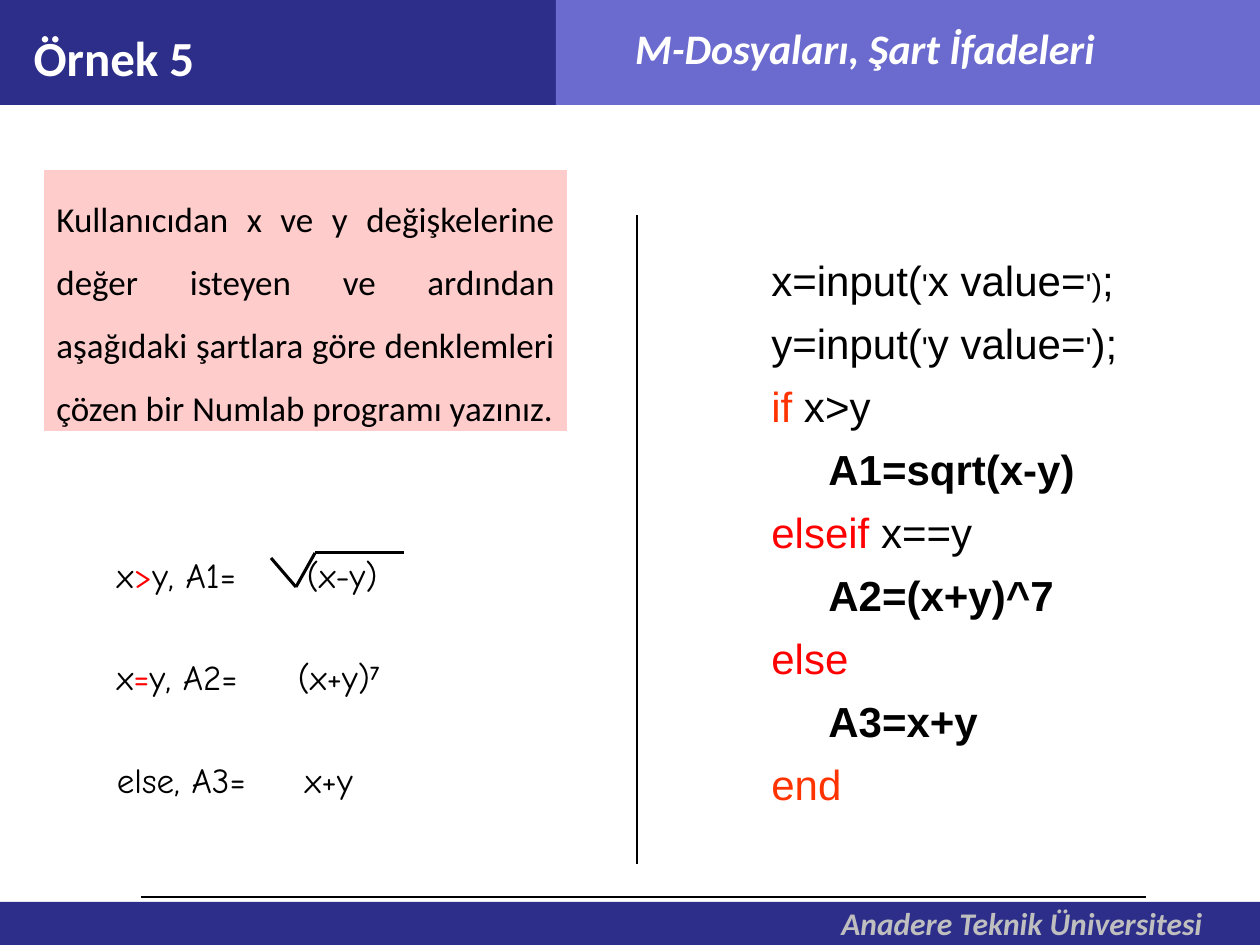
"""Build the slide on conditional statements in M-files."""
from lxml.etree import SubElement
from pptx import Presentation
from pptx.dml.color import RGBColor
from pptx.enum.shapes import MSO_CONNECTOR, MSO_SHAPE
from pptx.enum.text import MSO_ANCHOR, MSO_AUTO_SIZE, PP_ALIGN
from pptx.oxml.ns import qn
from pptx.util import Emu, Pt

PX_PER_INCH = 126
BLACK = RGBColor(0x00, 0x00, 0x00)
WHITE = RGBColor(0xFF, 0xFF, 0xFF)
SILVER = RGBColor(0xBF, 0xBF, 0xBF)
NAVY = RGBColor(0x2D, 0x2D, 0x8A)
VIOLET = RGBColor(0x6B, 0x6B, 0xCF)
PINK = RGBColor(0xFF, 0xCC, 0xCC)
RED = RGBColor(0xFF, 0x00, 0x00)
ORANGE = RGBColor(0xFF, 0x33, 0x00)

SMALL = {"size": 18}
BOLD = {"bold": True}
QUOTE = ("'", SMALL)
EQUATIONS = [
    (["x", (">", {"color": RED}), "y, A1=\t(x-y)"], 190),
    (["x", ("=", {"color": RED}), "y, A2=\t(x+y)", ("7", {"bold": True, "raised": True})], 181),
    (["else, A3=\tx+y"], 188),
]
CODE = [
    (["x=input(", QUOTE, "x value=", ("')", SMALL), ";"], 0),
    (["y=input(", QUOTE, "y value=", QUOTE, ");"], 0),
    ([("if", {"color": ORANGE}), " x>y"], 0),
    ([("A1=sqrt(x-y)", BOLD)], 57),
    ([("elseif", {"color": RED}), " x==y"], 0),
    ([("A2=(x+y)^7", BOLD)], 57),
    ([("else", {"color": RED})], 0),
    ([("A3=x+y", BOLD)], 57),
    ([("end", {"color": ORANGE})], 0),
]
RADICAL = [(271, 558), (296, 587), (315, 553), (404, 553)]


def px(length):
    """Turn pixels into EMU."""
    return Emu(round(length * 914400 / PX_PER_INCH))


def place(shape, left, top, width, height):
    """Set the position and size of a shape."""
    shape.left, shape.top = px(left), px(top)
    shape.width, shape.height = px(width), px(height)


def add_run(paragraph, text, font="Calibri", size=20, color=BLACK, bold=False,
            italic=False, raised=False):
    """Append one formatted run."""
    run = paragraph.add_run()
    run.text = text
    run.font.name, run.font.size = font, Pt(size)
    run.font.bold, run.font.italic = bold, italic
    run.font.color.rgb = color
    if raised:
        run.font._element.set("baseline", "30000")


def write(shape, paragraphs, align=PP_ALIGN.LEFT, anchor=MSO_ANCHOR.TOP,
          spacing=1.0, gap=0, **run_format):
    """Fill a shape with paragraphs of plain or individually formatted runs."""
    frame = shape.text_frame
    frame.word_wrap = True
    frame.auto_size = MSO_AUTO_SIZE.NONE
    frame.vertical_anchor = anchor
    for index, pieces in enumerate(paragraphs):
        paragraph = frame.add_paragraph() if index else frame.paragraphs[0]
        paragraph.alignment = align
        paragraph.line_spacing = spacing
        paragraph.space_before = Pt(gap if index else 0)
        for piece in pieces:
            text, own_format = (piece, {}) if isinstance(piece, str) else piece
            add_run(paragraph, text, **{**run_format, **own_format})
    return frame


def add_text(slide, box, paragraphs, **text_format):
    """Add a text box and return its frame."""
    return write(slide.shapes.add_textbox(*map(px, box)), paragraphs, **text_format)


def add_panel(slide, box, color):
    """Add a plain filled rectangle."""
    panel = slide.shapes.add_shape(MSO_SHAPE.RECTANGLE, *map(px, box))
    panel.shadow.inherit = False
    panel.fill.solid()
    panel.fill.fore_color.rgb = color
    panel.line.fill.background()
    return panel


def add_line(slide, start, end, weight):
    """Add a straight black line without shadow."""
    line = slide.shapes.add_connector(MSO_CONNECTOR.STRAIGHT, *map(px, start + end))
    line.line.color.rgb = BLACK
    line.line.width = Pt(weight)
    SubElement(line._element.spPr, qn("a:effectLst"))


def add_tab_stop(paragraph, position):
    """Give a paragraph one left tab stop."""
    tabs = SubElement(paragraph._p.get_or_add_pPr(), qn("a:tabLst"))
    SubElement(tabs, qn("a:tab"), pos=str(px(position)), algn="l")


def indent(paragraph, distance):
    """Indent a whole paragraph."""
    properties = paragraph._p.get_or_add_pPr()
    properties.set("marL", str(px(distance)))
    properties.set("indent", "0")


def add_frame(slide):
    """Add the header and footer bands with their captions."""
    add_panel(slide, (0, 902, 1260, 45), NAVY)
    add_panel(slide, (0, 0, 640, 105), NAVY)
    add_panel(slide, (556, 0, 709, 105), VIOLET)
    add_text(slide, (471, 16, 788, 63), [["M-Dosyaları, Şart İfadeleri"]],
             align=PP_ALIGN.CENTER, size=24, color=WHITE, bold=True, italic=True)
    add_text(slide, (829, 898, 464, 50), [["Anadere Teknik Üniversitesi"]],
             size=18, color=SILVER, bold=True, italic=True)
    add_line(slide, (141, 897), (1146, 897), 1.5)


def add_title(slide, text):
    """Move the title placeholder above the header and fill it."""
    title = slide.shapes.title
    place(title, 21, 21, 593, 66)
    slide.shapes.element.append(title.element)
    frame = write(title, [[text]], anchor=MSO_ANCHOR.MIDDLE, size=28, color=WHITE, bold=True)
    frame.margin_bottom = 0


def add_equations(slide):
    """Add the three cases and the radical sign of the first."""
    frame = add_text(slide, (95, 547, 528, 266), [pieces for pieces, _ in EQUATIONS],
                     gap=34.7, font="Comic Neue")
    frame.margin_left = px(22)
    for paragraph, (_, column) in zip(frame.paragraphs, EQUATIONS):
        add_tab_stop(paragraph, column)
    for start, end in zip(RADICAL, RADICAL[1:]):
        add_line(slide, start, end, 1.75)


def add_code(slide):
    """Add the program listing with its indented branches."""
    frame = add_text(slide, (759, 236, 422, 585), [pieces for pieces, _ in CODE],
                     spacing=1.25, font="Arial", size=24)
    for paragraph, (_, distance) in zip(frame.paragraphs, CODE):
        indent(paragraph, distance)


def main():
    """Build and save the slide."""
    deck = Presentation()
    deck.slide_width, deck.slide_height = px(1260), px(945)
    slide = deck.slides.add_slide(deck.slide_layouts[5])
    add_frame(slide)
    add_title(slide, "Örnek 5")
    add_equations(slide)
    task = add_panel(slide, (44, 170, 523, 261), PINK)
    write(task, [["Kullanıcıdan x ve y değişkelerine değer isteyen ve ardından "
                  "aşağıdaki şartlara göre denklemleri çözen bir Numlab programı yazınız."]],
          align=PP_ALIGN.JUSTIFY, spacing=1.5)
    add_code(slide)
    add_line(slide, (637, 215), (637, 864), 0.75)
    deck.save("out.pptx")


if __name__ == "__main__":
    main()
